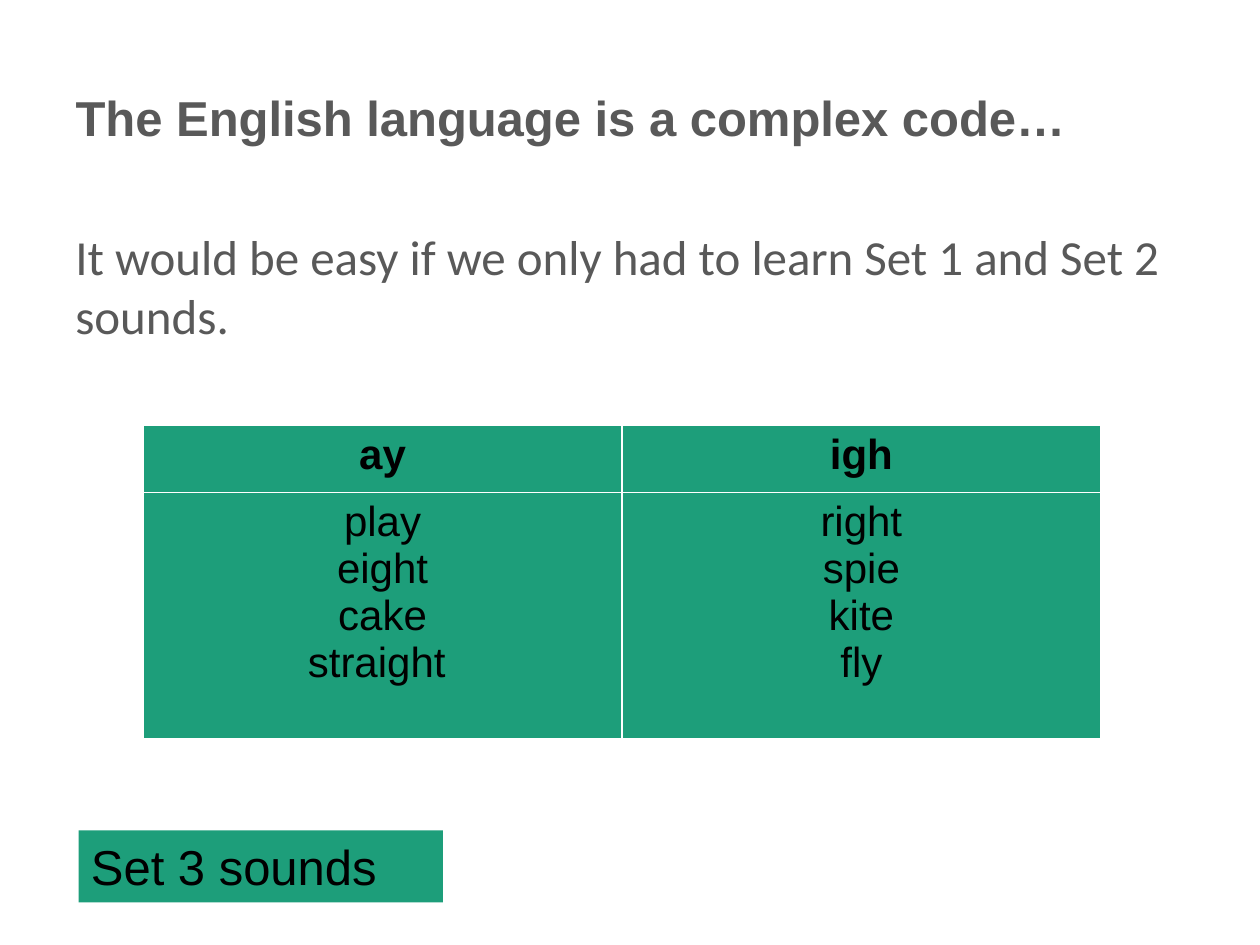
import pptx
import pptx.util
import pptx.dml.color
import pptx.enum.shapes
import pptx.enum.text

Pt = pptx.util.Pt
PP_ALIGN = pptx.enum.text.PP_ALIGN
COLORS = {"heading": "595959", "text": "000000", "green": "1D9E7A"}


def rgb(name):
    return pptx.dml.color.RGBColor.from_string(COLORS[name])


def style(paragraph, size, color, name="Arial", bold=False, align=PP_ALIGN.LEFT):
    paragraph.alignment = align
    paragraph.font.name = name
    paragraph.font.size = Pt(size)
    paragraph.font.bold = bold
    paragraph.font.color.rgb = rgb(color)


presentation = pptx.Presentation()
presentation.slide_width = Pt(720)
presentation.slide_height = Pt(540)
slide = presentation.slides.add_slide(presentation.slide_layouts[5])

# Title
title = slide.shapes.title
title.left, title.top, title.width, title.height = Pt(36), Pt(21.6), Pt(648), Pt(90)
title.text_frame.text = "The English language is a complex code…"
title.text_frame.vertical_anchor = pptx.enum.text.MSO_ANCHOR.MIDDLE
style(title.text_frame.paragraphs[0], 28, "heading", bold=True)

# Introduction
introduction = slide.shapes.add_textbox(Pt(36), Pt(126), Pt(648), Pt(356.4))
introduction.text_frame.word_wrap = True
introduction.text_frame.text = (
    "It would be easy if we only had to learn Set 1 and Set 2 sounds."
)
style(introduction.text_frame.paragraphs[0], 28, "heading", name="Calibri")

# Table of spellings: the default table style supplies the white borders
spellings = {
    "ay": ["play", "eight", "cake", "straight "],
    "igh": ["right", "spie", "kite", "fly"],
}
table = slide.shapes.add_table(
    2, len(spellings), Pt(81.8), Pt(243), Pt(547.2), Pt(179)
).table
table.horz_banding = False
table.rows[0].height = Pt(38.5)
table.rows[1].height = Pt(140.5)
for column, (sound, words) in enumerate(spellings.items()):
    for row, lines in enumerate([[sound], words]):
        cell = table.cell(row, column)
        cell.fill.solid()
        cell.fill.fore_color.rgb = rgb("green")
        cell.text_frame.text = "\n".join(lines)
        for paragraph in cell.text_frame.paragraphs:
            style(paragraph, 24, "text", bold=row == 0, align=PP_ALIGN.CENTER)

# Set 3 label
label = slide.shapes.add_shape(
    pptx.enum.shapes.MSO_SHAPE.RECTANGLE, Pt(44.9), Pt(474.5), Pt(208.2), Pt(41.2)
)
label.shadow.inherit = False
label.fill.solid()
label.fill.fore_color.rgb = rgb("green")
label.line.fill.background()
label.text_frame.word_wrap = True
label.text_frame.auto_size = pptx.enum.text.MSO_AUTO_SIZE.SHAPE_TO_FIT_TEXT
label.text_frame.vertical_anchor = pptx.enum.text.MSO_ANCHOR.TOP
label.text_frame.text = "Set 3 sounds"
style(label.text_frame.paragraphs[0], 28, "text")

presentation.save("out.pptx")
